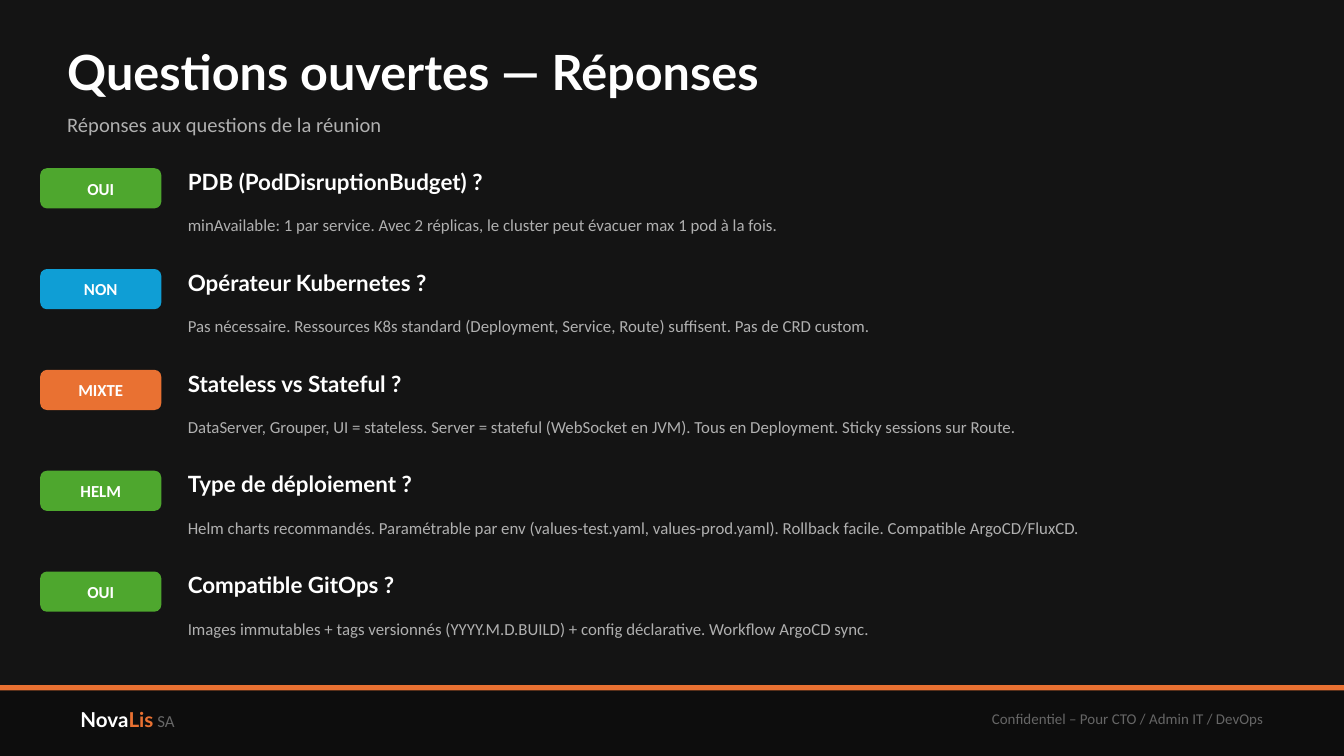
import pptx
import pptx.dml.color
import pptx.enum.shapes
import pptx.enum.text
import pptx.util

Cm = pptx.util.Cm
SHAPES = pptx.enum.shapes.MSO_SHAPE
ALIGN = pptx.enum.text.PP_ALIGN

WHITE, LIGHT, GREY = "FFFFFF", "B0B0B0", "666666"
GREEN, BLUE, ORANGE = "4EA72E", "0F9ED5", "E97132"
HEADING, BODY = "Lato", "Calibri"

ANSWERS = [
    ("OUI", GREEN, "PDB (PodDisruptionBudget) ?",
     "minAvailable: 1 par service. Avec 2 réplicas, le cluster peut évacuer max 1 pod à la fois."),
    ("NON", BLUE, "Opérateur Kubernetes ?",
     "Pas nécessaire. Ressources K8s standard (Deployment, Service, Route) suffisent. Pas de CRD custom."),
    ("MIXTE", ORANGE, "Stateless vs Stateful ?",
     "DataServer, Grouper, UI = stateless. Server = stateful (WebSocket en JVM). "
     "Tous en Deployment. Sticky sessions sur Route."),
    ("HELM", GREEN, "Type de déploiement ?",
     "Helm charts recommandés. Paramétrable par env (values-test.yaml, values-prod.yaml). "
     "Rollback facile. Compatible ArgoCD/FluxCD."),
    ("OUI", GREEN, "Compatible GitOps ?",
     "Images immutables + tags versionnés (YYYY.M.D.BUILD) + config déclarative. Workflow ArgoCD sync."),
]


def paint(fill, colour):
    """Make a fill solid in the given hex colour."""
    fill.solid()
    fill.fore_color.rgb = pptx.dml.color.RGBColor.from_string(colour)


def write(shape, spans, align=ALIGN.LEFT, inset=0):
    """Write (text, size, font, colour, bold) spans, centred vertically."""
    frame = shape.text_frame
    frame.word_wrap = True
    frame.vertical_anchor = pptx.enum.text.MSO_ANCHOR.MIDDLE
    frame.margin_left = frame.margin_right = Cm(inset)
    frame.margin_top = frame.margin_bottom = Cm(inset / 2)
    para = frame.paragraphs[0]
    para.alignment = align
    for text, size, font, colour, bold in spans:
        span = para.add_run()
        span.text = text
        span.font.size = pptx.util.Pt(size)
        span.font.name = font
        span.font.bold = bold
        paint(span.font.fill, colour)


def add_text(page, left, top, width, height, spans, **options):
    """Add a text box holding one paragraph."""
    box = page.shapes.add_textbox(Cm(left), Cm(top), Cm(width), Cm(height))
    write(box, spans, **options)


def add_block(page, kind, left, top, width, height, colour):
    """Add a flat filled shape without outline."""
    block = page.shapes.add_shape(kind, Cm(left), Cm(top), Cm(width), Cm(height))
    block.shadow.inherit = False
    block.line.fill.background()
    paint(block.fill, colour)
    return block


def add_header(page, left, top, width):
    """Place the title and the subtitle."""
    add_text(page, left, top, width, 1.4,
             [("Questions ouvertes — Réponses", 26, HEADING, WHITE, True)])
    add_text(page, left, top + 1.27, width, 0.89,
             [("Réponses aux questions de la réunion", 11, BODY, LIGHT, False)])


def add_answer(page, left, top, width, badge, colour, question, answer):
    """Place one badge with its question and answer."""
    indent = 2.79
    pill = add_block(page, SHAPES.ROUNDED_RECTANGLE, left, top + 0.13, 2.29, 0.76, colour)
    pill.adjustments[0] = 0.17
    write(pill, [(badge, 9, BODY, WHITE, True)], align=ALIGN.CENTER)
    add_text(page, left + indent, top, width - indent, 0.76,
             [(question, 12, HEADING, WHITE, True)])
    add_text(page, left + indent, top + 0.76, width - indent, 0.89,
             [(answer, 9, BODY, LIGHT, False)])


def add_answers(page, left, top, width, height):
    """Stack the answers evenly down the box."""
    pitch = height / len(ANSWERS)
    for row, answer in enumerate(ANSWERS):
        add_answer(page, left, top + row * pitch, width, *answer)


def add_footer(page, left, top, width, height):
    """Place the footer band, its rule, the name and the notice."""
    margin, inset = 1.27, 0.25
    add_block(page, SHAPES.RECTANGLE, left, top, width, height, "0D0D0D")
    add_block(page, SHAPES.RECTANGLE, left, top, width, 0.1, ORANGE)
    add_text(page, left + margin, top + 0.13, 7.62, 1.02,
             [("Nova", 11, HEADING, WHITE, True),
              ("Lis", 11, HEADING, ORANGE, True),
              (" SA", 9, BODY, GREY, False)], inset=inset)
    notice = 10.16
    add_text(page, left + width - margin - notice, top + 0.13, notice, 1.02,
             [("Confidentiel – Pour CTO / Admin IT / DevOps", 8, BODY, GREY, False)],
             align=ALIGN.RIGHT, inset=inset)


def main():
    """Build the slide and save the deck."""
    deck = pptx.Presentation()
    deck.slide_width, deck.slide_height = Cm(25.4), Cm(14.29)
    page = deck.slides.add_slide(deck.slide_layouts[6])
    paint(page.background.fill, "141414")
    add_footer(page, 0, 12.95, 25.4, 1.34)
    add_header(page, 1.27, 0.64, 22.86)
    add_answers(page, 0.76, 3.05, 23.88, 9.53)
    deck.save("out.pptx")


if __name__ == "__main__":
    main()
